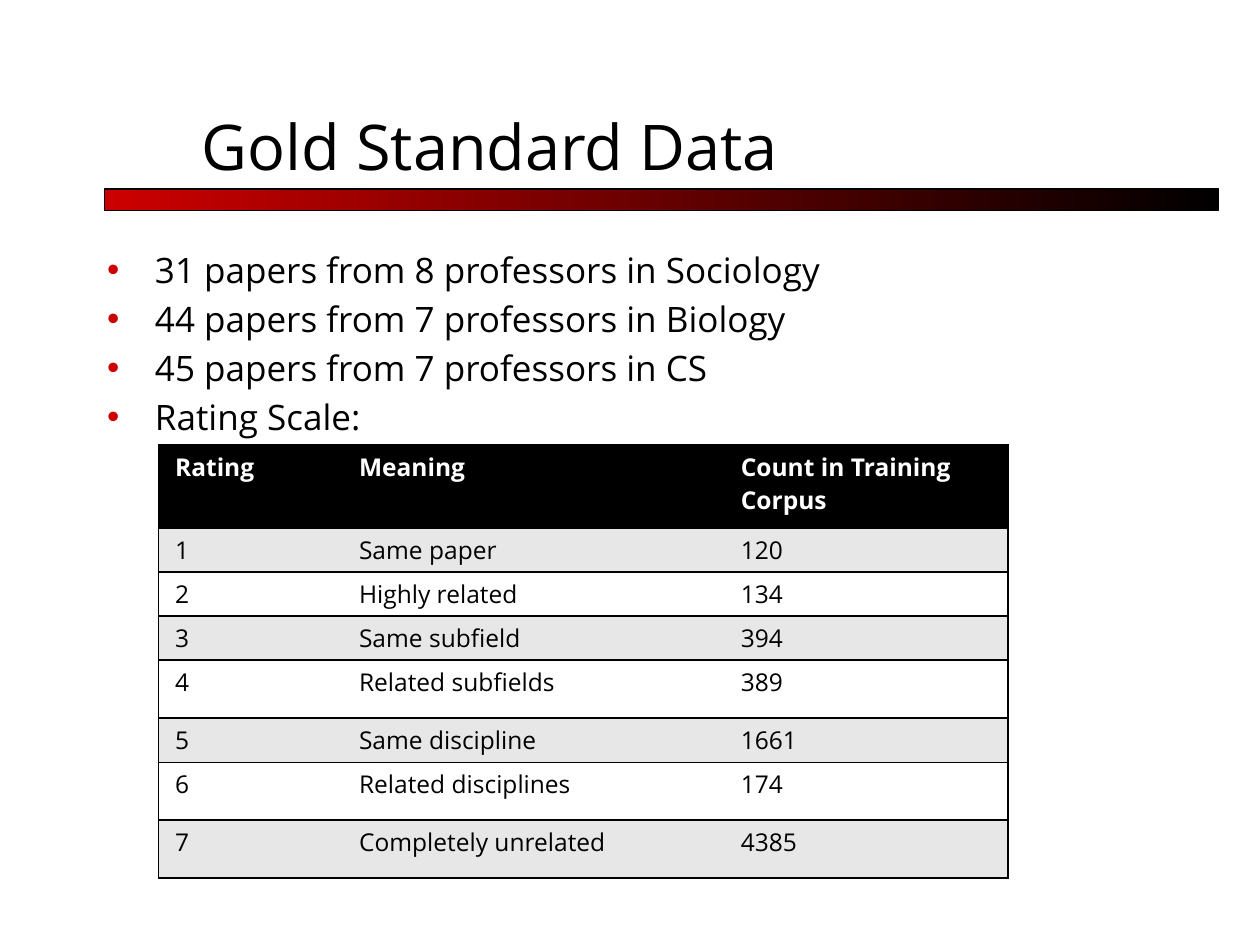
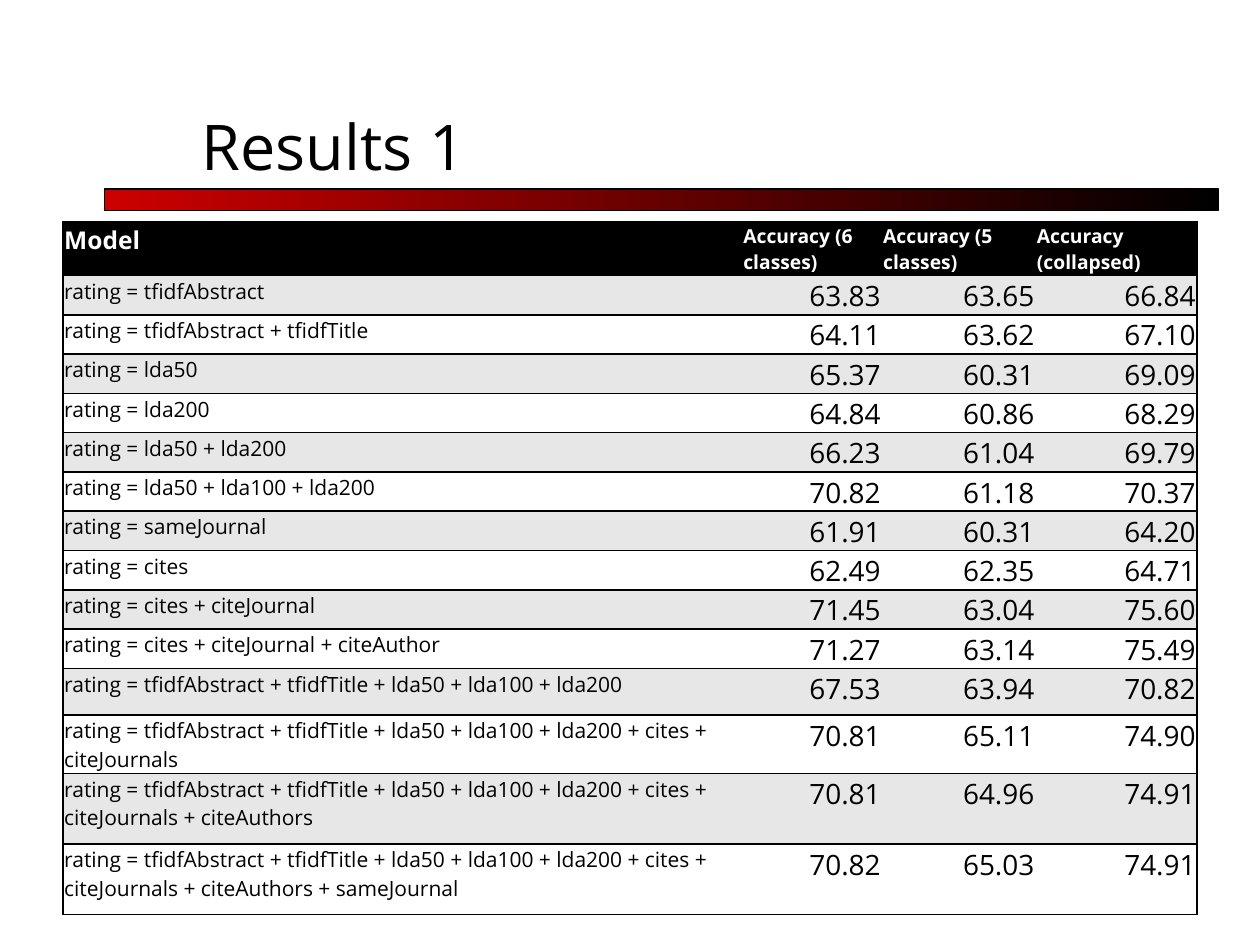
from dataclasses import dataclass

from lxml.etree import SubElement
from pptx import Presentation
from pptx.dml.color import RGBColor
from pptx.enum.shapes import MSO_SHAPE as Shape
from pptx.enum.text import MSO_ANCHOR as Anchor, MSO_AUTO_SIZE as AutoSize, PP_ALIGN as Align
from pptx.oxml.ns import qn
from pptx.util import Inches, Pt


@dataclass(frozen=True)
class Theme:
    font: str = "Open Sans"
    red: str = "CC0000"
    black: str = "000000"
    white: str = "FFFFFF"
    grey: str = "E7E7E7"
    title: int = 36
    body: int = 20
    rating: int = 14
    model: int = 12
    accuracy: int = 16
    accuracy_head: int = 11


THEME = Theme()

PAPER_POINTS = [
    "31 papers from 8 professors in Sociology",
    "44 papers from 7 professors in Biology",
    "45 papers from 7 professors in CS",
    "Rating Scale:",
]

RATING_ROWS = [
    ("Rating", "Meaning", "Count in Training Corpus"),
    ("1", "Same paper", "120"),
    ("2", "Highly related", "134"),
    ("3", "Same subfield", "394"),
    ("4", "Related subfields", "389"),
    ("5", "Same discipline", "1661"),
    ("6", "Related disciplines", "174"),
    ("7", "Completely unrelated", "4385"),
]

LDA_ALL = "lda50 + lda100 + lda200"
TEXT_ALL = f"tfidfAbstract + tfidfTitle + {LDA_ALL}"
CITED_ALL = f"{TEXT_ALL} + cites + citeJournals"

MODEL_SCORES = [
    ("tfidfAbstract", "63.83", "63.65", "66.84"),
    ("tfidfAbstract + tfidfTitle", "64.11", "63.62", "67.10"),
    ("lda50", "65.37", "60.31", "69.09"),
    ("lda200", "64.84", "60.86", "68.29"),
    ("lda50 + lda200", "66.23", "61.04", "69.79"),
    (LDA_ALL, "70.82", "61.18", "70.37"),
    ("sameJournal", "61.91", "60.31", "64.20"),
    ("cites", "62.49", "62.35", "64.71"),
    ("cites + citeJournal", "71.45", "63.04", "75.60"),
    ("cites + citeJournal + citeAuthor", "71.27", "63.14", "75.49"),
    (TEXT_ALL, "67.53", "63.94", "70.82"),
    (CITED_ALL, "70.81", "65.11", "74.90"),
    (f"{CITED_ALL} + citeAuthors", "70.81", "64.96", "74.91"),
    (f"{CITED_ALL} + citeAuthors + sameJournal", "70.82", "65.03", "74.91"),
]

RESULT_ROWS = [
    ("Model", "Accuracy (6 classes)", "Accuracy (5 classes)", "Accuracy (collapsed)"),
    *[(f"rating = {model}", *scores) for model, *scores in MODEL_SCORES],
]


def rgb(color):
    return RGBColor.from_string(color)


def place(shape, left, top, width, height):
    shape.left, shape.top = Inches(left), Inches(top)
    shape.width, shape.height = Inches(width), Inches(height)


def format_text(para, size, color=THEME.black, bold=False):
    for span in para.runs:
        span.font.name = THEME.font
        span.font.size = Pt(size)
        span.font.bold = bold
        span.font.color.rgb = rgb(color)


def add_page(deck, layout, title):
    page = deck.slides.add_slide(deck.slide_layouts.get_by_name(layout))
    band = page.shapes.add_shape(Shape.RECTANGLE, Inches(0.83), Inches(1.5), Inches(8.84), Inches(0.17))
    band.shadow.inherit = False
    band.fill.gradient()
    band.fill.gradient_angle = 0
    for stop, color in zip(band.fill.gradient_stops, (THEME.red, THEME.black)):
        stop.color.rgb = rgb(color)
    band.line.color.rgb = rgb(THEME.black)
    band.line.width = Pt(0.75)

    box = page.shapes.title
    place(box, 1.5, 0.42, 8.5, 1.08)
    frame = box.text_frame
    frame.text = title
    frame.auto_size = AutoSize.NONE
    frame.vertical_anchor = Anchor.BOTTOM
    frame.paragraphs[0].alignment = Align.LEFT
    format_text(frame.paragraphs[0], THEME.title)
    return page


def fill_body(box, points):
    place(box, 0.75, 1.92, 8.5, 4.92)
    frame = box.text_frame
    frame.text = "\n".join(points)
    frame.auto_size = AutoSize.NONE
    for para in frame.paragraphs:
        format_text(para, THEME.body)
        properties = para._p.get_or_add_pPr()
        properties.set("marL", str(Inches(0.38)))
        properties.set("indent", str(-Inches(0.38)))
        bullet = SubElement(properties, qn("a:buClr"))
        SubElement(bullet, qn("a:srgbClr"), val=THEME.red)


def set_borders(cell, first, last):
    properties = cell._tc.get_or_add_tcPr()
    for side, drawn in (("L", first), ("R", last), ("T", True), ("B", True)):
        line = SubElement(properties, qn(f"a:ln{side}"), w=str(Pt(1)))
        if drawn:
            fill = SubElement(line, qn("a:solidFill"))
            SubElement(fill, qn("a:srgbClr"), val=THEME.black)
        else:
            SubElement(line, qn("a:noFill"))


def add_grid(page, rows, left, top, widths, heights, margins, cell_style):
    table = page.shapes.add_table(
        len(rows), len(widths), Inches(left), Inches(top), Inches(sum(widths)), Inches(sum(heights))
    ).table
    for column, width in zip(table.columns, widths):
        column.width = Inches(width)
    for row, height in zip(table.rows, heights):
        row.height = Inches(height)
    for r, texts in enumerate(rows):
        header = r == 0
        background = THEME.black if header else (THEME.white, THEME.grey)[r % 2]
        for c, text in enumerate(texts):
            cell = table.cell(r, c)
            set_borders(cell, c == 0, c == len(widths) - 1)
            cell.fill.solid()
            cell.fill.fore_color.rgb = rgb(background)
            cell.margin_left, cell.margin_top, cell.margin_right, cell.margin_bottom = map(Inches, margins)
            cell.text_frame.text = text
            para = cell.text_frame.paragraphs[0]
            size, para.alignment = cell_style(header, c)
            format_text(para, size, THEME.white if header else THEME.black, header)


def rating_style(header, column):
    return THEME.rating, Align.LEFT


def result_style(header, column):
    if column == 0:
        return (THEME.rating if header else THEME.model), Align.LEFT
    return (THEME.accuracy_head, Align.LEFT) if header else (THEME.accuracy, Align.RIGHT)


def main():
    deck = Presentation()
    deck.slide_width, deck.slide_height = Inches(10), Inches(7.5)

    page = add_page(deck, "Title and Content", "Gold Standard Data")
    fill_body(page.placeholders[1], PAPER_POINTS)
    add_grid(
        page, RATING_ROWS, 1.26, 3.53,
        widths=[1.46, 3.03, 2.25],
        heights=[0.66, 0.35, 0.35, 0.35, 0.46, 0.35, 0.46, 0.46],
        margins=(0.13, 0.04, 0.13, 0.04),
        cell_style=rating_style,
    )

    page = add_page(deck, "Title Only", "Results 1")
    add_grid(
        page, RESULT_ROWS, 0.5, 1.76,
        widths=[5.39, 1.11, 1.22, 1.28],
        heights=[0.37] + [0.28] * 10 + [0.37, 0.4, 0.56, 0.56],
        margins=(0.01, 0.01, 0.01, 0),
        cell_style=result_style,
    )
    deck.save("out.pptx")


if __name__ == "__main__":
    main()
